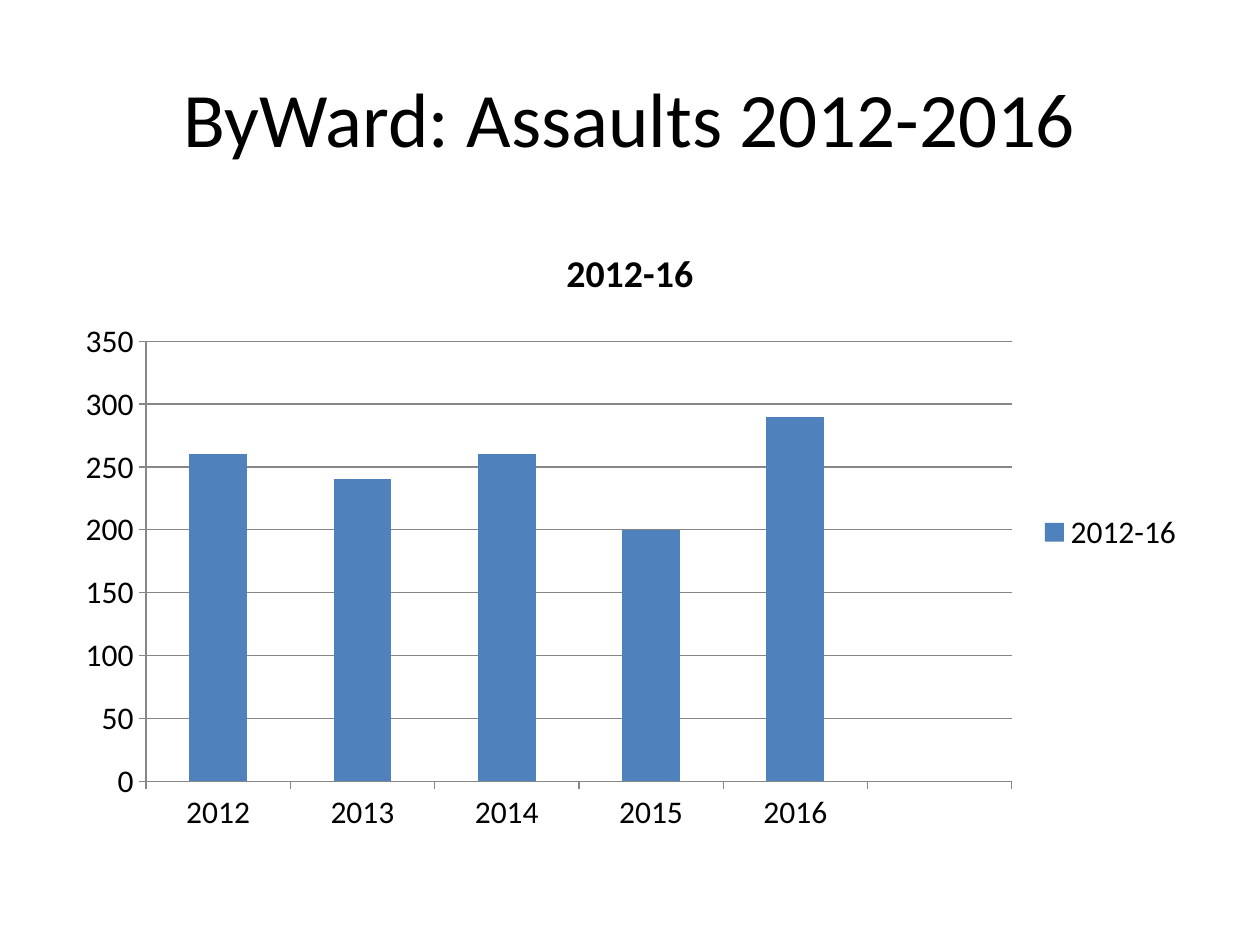
from pptx import Presentation
from pptx import util as u
from pptx.chart import data as chart_data
from pptx.dml import color
from pptx.enum import chart as chart_enum
from pptx.enum import text

BLACK = color.RGBColor(0x00, 0x00, 0x00)
BLUE = color.RGBColor(0x4F, 0x81, 0xBD)
GRAY = color.RGBColor(0x87, 0x87, 0x87)
FONT = "Calibri"
YEARS = ["2012", "2013", "2014", "2015", "2016", ""]
ASSAULTS = [260, 240, 260, 200, 290, None]
PERIOD = "2012-16"


def style_font(font, size, bold=False):
    font.name = FONT
    font.size = u.Pt(size)
    font.bold = bold
    font.color.rgb = BLACK


def fill_title(slide, left, top, width, height):
    title = slide.shapes.title
    title.left, title.top, title.width, title.height = left, top, width, height
    title.text_frame.vertical_anchor = text.MSO_ANCHOR.MIDDLE
    paragraph = title.text_frame.paragraphs[0]
    paragraph.alignment = text.PP_ALIGN.CENTER
    run = paragraph.add_run()
    run.text = "ByWard: Assaults 2012-2016"
    style_font(run.font, 44)


def style_axis(axis):
    axis.major_tick_mark = chart_enum.XL_TICK_MARK.OUTSIDE
    axis.minor_tick_mark = chart_enum.XL_TICK_MARK.NONE
    axis.format.line.color.rgb = GRAY
    axis.format.line.width = u.Pt(0.75)
    style_font(axis.tick_labels.font, 18)


def add_assault_chart(slide, left, top, width, height):
    assault_data = chart_data.CategoryChartData()
    assault_data.categories = YEARS
    assault_data.add_series(PERIOD, ASSAULTS)
    chart = slide.shapes.add_chart(
        chart_enum.XL_CHART_TYPE.COLUMN_CLUSTERED,
        left, top, width, height, assault_data).chart
    style_font(chart.font, 18)

    chart.has_title = True
    run = chart.chart_title.text_frame.paragraphs[0].add_run()
    run.text = PERIOD
    style_font(run.font, 21.6, bold=True)
    chart.chart_title.include_in_layout = False

    chart.has_legend = True
    chart.legend.position = chart_enum.XL_LEGEND_POSITION.RIGHT
    chart.legend.include_in_layout = False
    style_font(chart.legend.font, 18)

    style_axis(chart.category_axis)
    style_axis(chart.value_axis)
    chart.value_axis.minimum_scale = 0
    chart.value_axis.maximum_scale = 350
    chart.value_axis.major_unit = 50
    chart.value_axis.has_major_gridlines = True
    gridline = chart.value_axis.major_gridlines.format.line
    gridline.color.rgb = GRAY
    gridline.width = u.Pt(0.75)

    plot = chart.plots[0]
    plot.gap_width = 150
    plot.vary_by_categories = False
    fill = plot.series[0].format.fill
    fill.solid()
    fill.fore_color.rgb = BLUE


def main():
    presentation = Presentation()
    presentation.slide_width = u.Inches(10)
    presentation.slide_height = u.Inches(7.5)
    slide = presentation.slides.add_slide(presentation.slide_layouts[5])
    margin, content_width = u.Inches(0.5), u.Inches(9)
    fill_title(slide, margin, u.Inches(0.3), content_width, u.Inches(1.25))
    add_assault_chart(slide, margin, u.Inches(1.75), content_width, u.Inches(4.95))
    presentation.save("out.pptx")


if __name__ == "__main__":
    main()
